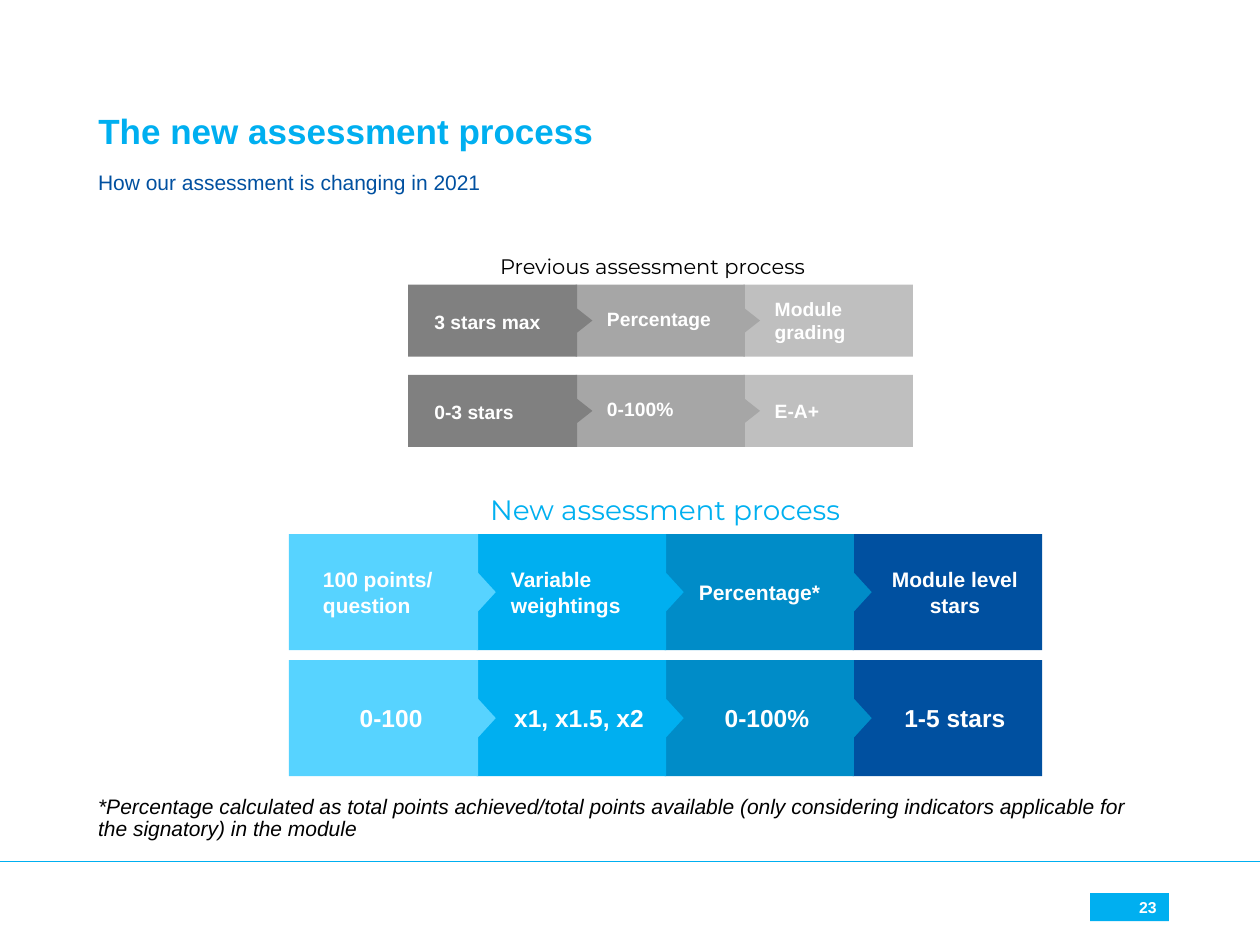
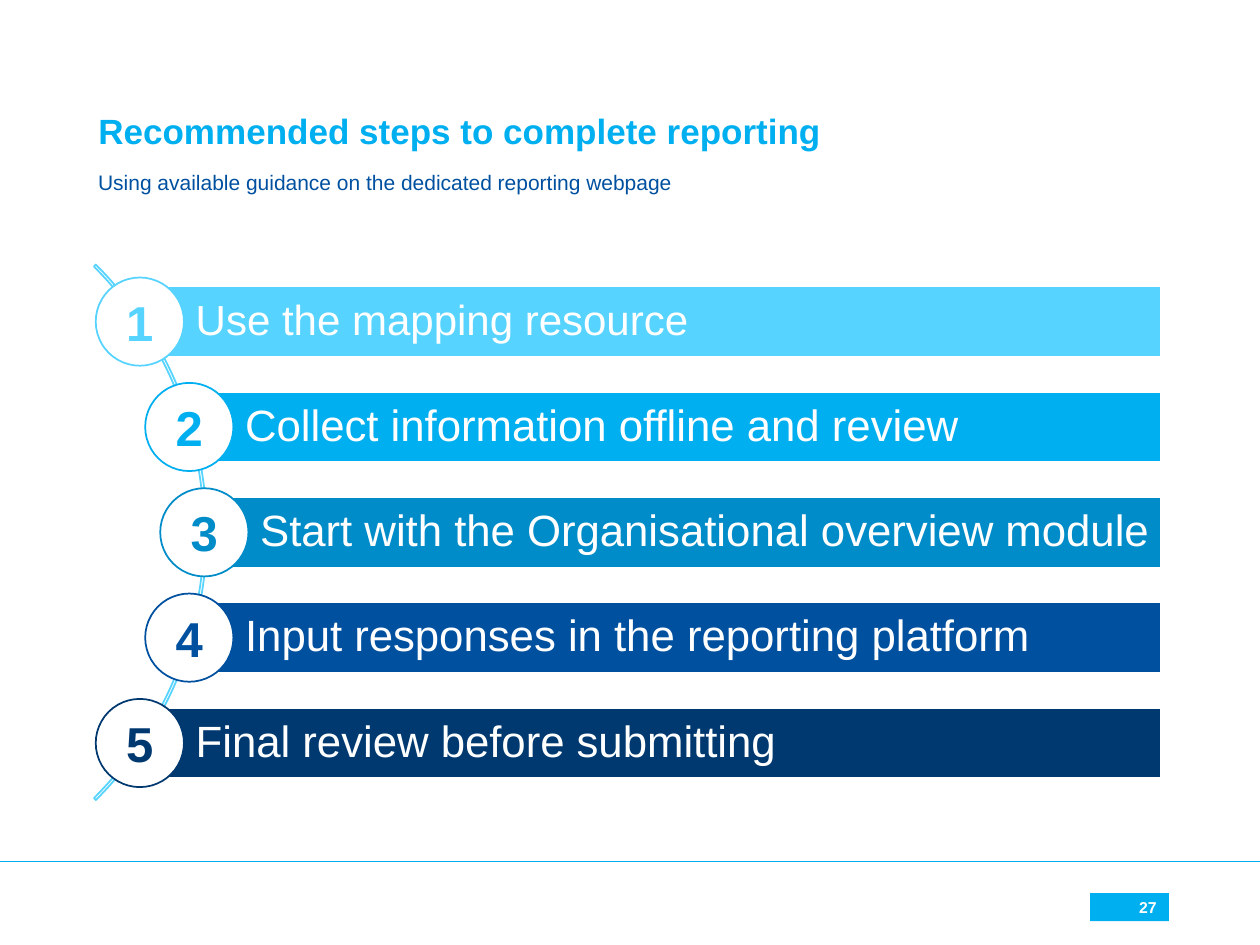
from math import sqrt

from pptx import Presentation
from pptx.dml.color import RGBColor
from pptx.enum.shapes import MSO_CONNECTOR, MSO_SHAPE
from pptx.enum.text import MSO_ANCHOR, MSO_AUTO_SIZE, PP_ALIGN
from pptx.oxml.ns import qn
from pptx.util import Pt

LEFT, CENTER, RIGHT = PP_ALIGN.LEFT, PP_ALIGN.CENTER, PP_ALIGN.RIGHT
TOP, MIDDLE, BOTTOM = MSO_ANCHOR.TOP, MSO_ANCHOR.MIDDLE, MSO_ANCHOR.BOTTOM
RECT, OVAL, ARC = MSO_SHAPE.RECTANGLE, MSO_SHAPE.OVAL, MSO_SHAPE.BLOCK_ARC

COLORS = {
    "white": "FFFFFF", "black": "000000",
    "sky": "57D3FF", "cyan": "00AFF0", "ocean": "008CC8",
    "blue": "0050A0", "navy": "003870", "heading": "00B0F0",
    "grey1": "808080", "grey2": "A6A6A6", "grey3": "BFBFBF",
}
W, H = 720, 540
MARGIN, TEXT_W = 49, 619.2
INSETS = (7.2, 3.6, 7.2, 3.6)

PROCESSES = [
    {
        "heading": "Previous assessment process",
        "heading_box": (252.7, 141.1, 240.5, 21.6), "heading_size": 12,
        "heading_color": "black",
        "left": 233.2, "pitch": 95.8, "height": 41.2, "tip": 8.7,
        "colors": ["grey1", "grey2", "grey3"],
        # per column: label offset x, offset y, width
        "labels": [(7.9, 0.6, 82), (10.8, -1, 80), (10.8, 0, 85)],
        "rows": [
            (162.6, 11, [LEFT] * 3, ["3 stars max", "Percentage", "Module grading"]),
            (214.2, 11, [LEFT] * 3, ["0-3 stars", "0-100%", "E-A+"]),
        ],
    },
    {
        "heading": "New assessment process",
        "heading_box": (252, 277.9, 256.3, 26.6), "heading_size": 16,
        "heading_color": "heading",
        "left": 165, "pitch": 107.4, "height": 66.3, "tip": 10.1,
        "colors": ["sky", "cyan", "ocean", "blue"],
        "labels": [(12.5, 0, 92)] * 4,
        "rows": [
            (305.2, 12, [LEFT] * 3 + [CENTER],
             ["100 points/ question", "Variable weightings", "Percentage*",
              "Module level stars"]),
            (377.2, 14, [CENTER] * 4,
             ["0-100", "x1, x1.5, x2", "0-100%", "1-5 stars"]),
        ],
    },
]
FOOTNOTE = ("*Percentage calculated as total points achieved/total points available "
            "(only considering indicators applicable for the signatory) in the module")

STEPS = [
    ("Use the mapping resource", "sky", 24),
    ("Collect information offline and review", "cyan", 25),
    ("Start with the Organisational overview module", "ocean", 25),
    ("Input responses in the reporting platform", "blue", 25),
    ("Final review before submitting", "navy", 25),
]


def rgb(name):
    return RGBColor.from_string(COLORS[name])


def write(shape, text, size, color, bold=False, italic=False, align=LEFT,
          anchor=TOP, font="Arial", spacing=None, insets=INSETS):
    tf = shape.text_frame
    tf.word_wrap = True
    tf.auto_size = MSO_AUTO_SIZE.NONE
    tf.vertical_anchor = anchor
    tf.margin_left, tf.margin_top, tf.margin_right, tf.margin_bottom = map(Pt, insets)
    p = tf.paragraphs[0]
    p.text = text
    p.alignment = align
    if spacing:
        p.line_spacing = spacing
    p.font.name, p.font.size = font, Pt(size)
    p.font.bold, p.font.italic = bold, italic
    p.font.color.rgb = rgb(color)


def add_text(s, box, text, size, color, **style):
    write(s.shapes.add_textbox(*map(Pt, box)), text, size, color, **style)


def paint(shape, fill=None, line=None):
    shape.shadow.inherit = False
    if fill:
        shape.fill.solid()
        shape.fill.fore_color.rgb = rgb(fill)
    else:
        shape.fill.background()
    if line:
        shape.line.color.rgb = rgb(line)
        shape.line.width = Pt(1)
    else:
        shape.line.fill.background()


def add_shape(s, kind, box, fill=None, line=None):
    shape = s.shapes.add_shape(kind, *map(Pt, box))
    paint(shape, fill, line)
    return shape


def add_slide(prs, title, subtitle, number):
    """Add a slide with the shared title, subtitle, footer rule and page number."""
    s = prs.slides.add_slide(prs.slide_layouts[5])
    rule = s.shapes.add_connector(MSO_CONNECTOR.STRAIGHT, 0, Pt(492.4), Pt(W), Pt(492.4))
    rule.line.color.rgb = rgb("cyan")
    rule.line.width = Pt(0.5)
    sp_pr = rule._element.spPr
    sp_pr.append(sp_pr.makeelement(qn("a:effectLst"), {}))

    t = s.shapes.title
    t.left, t.top, t.width, t.height = map(Pt, (MARGIN, 51.1, TEXT_W, 39.6))
    write(t, title, 20, "cyan", bold=True, anchor=BOTTOM, spacing=0.9)
    add_text(s, (MARGIN, 95, TEXT_W, 33.1), subtitle, 12, "blue", spacing=0.9)

    page = add_shape(s, RECT, (623, 510.4, 45, 16), "cyan")
    write(page, str(number), 9, "white", bold=True, align=RIGHT, anchor=MIDDLE,
          insets=(7.2, 0, 7.2, 0))
    return s


def add_arrow_block(s, x, y, w, h, tip, color):
    """Rectangle with a small triangular tip on the middle of its right side."""
    builder = s.shapes.build_freeform(Pt(x), Pt(y))
    points = [(x + w, y), (x + w, y + h / 3), (x + w + tip, y + h / 2),
              (x + w, y + h * 2 / 3), (x + w, y + h), (x, y + h)]
    builder.add_line_segments([(Pt(a), Pt(b)) for a, b in points], close=True)
    paint(builder.convert_to_shape(), color)


def add_process(s, proc):
    add_text(s, proc["heading_box"], proc["heading"], proc["heading_size"],
             proc["heading_color"], align=CENTER, font="Montserrat")
    pitch, h = proc["pitch"], proc["height"]
    last = len(proc["colors"]) - 1
    for y, size, aligns, texts in proc["rows"]:
        # right to left, so each tip lies over the next block
        for i in range(last, -1, -1):
            x, color = proc["left"] + i * pitch, proc["colors"][i]
            if i == last:
                add_shape(s, RECT, (x, y, pitch + 1, h), color)
            else:
                add_arrow_block(s, x, y, pitch + 0.8, h, proc["tip"], color)
        for i, (dx, dy, w) in enumerate(proc["labels"]):
            add_text(s, (proc["left"] + i * pitch + dx, y + dy, w, h), texts[i], size,
                     "white", bold=True, align=aligns[i], anchor=MIDDLE)


def add_steps(s):
    """Numbered circles along an arc, each followed by a bar to the right edge."""
    arc_x, arc_y, radius, arc_size = -98.2, 304.2, 215, 432.7
    pitch, circle, bar_h, bar_right = 60.2, 50.4, 40.2, 663.5
    arc = add_shape(s, ARC, (arc_x - arc_size / 2, arc_y - arc_size / 2,
                             arc_size, arc_size), line="sky")
    for i, value in enumerate((189, 27, 0.0036)):
        arc.adjustments[i] = value

    for i, (text, color, size) in enumerate(STEPS):
        dy = (i - (len(STEPS) - 1) / 2) * pitch
        x, y = arc_x + sqrt(radius ** 2 - dy ** 2), arc_y + dy
        bar = add_shape(s, RECT, (x, y - bar_h / 2, bar_right - x, bar_h), color, "white")
        write(bar, text, size, "white", anchor=MIDDLE, spacing=0.9,
              insets=(31.9, 5, 4, 5))
        dot = add_shape(s, OVAL, (x - circle / 2, y - circle / 2, circle, circle),
                        "white", color)
        write(dot, str(i + 1), 28, color, bold=True, align=CENTER, anchor=MIDDLE,
              insets=(0, 0, 0, 0))


def main():
    prs = Presentation()
    prs.slide_width, prs.slide_height = Pt(W), Pt(H)

    s = add_slide(prs, "The new assessment process",
                  "How our assessment is changing in 2021", 23)
    for proc in PROCESSES:
        add_process(s, proc)
    add_text(s, (MARGIN, 451.4, TEXT_W, 33.1), FOOTNOTE, 12, "black",
             italic=True, spacing=0.9)

    s = add_slide(prs, "Recommended steps to complete reporting",
                  "Using available guidance on the dedicated reporting webpage", 27)
    add_steps(s)

    prs.save("out.pptx")


if __name__ == "__main__":
    main()
